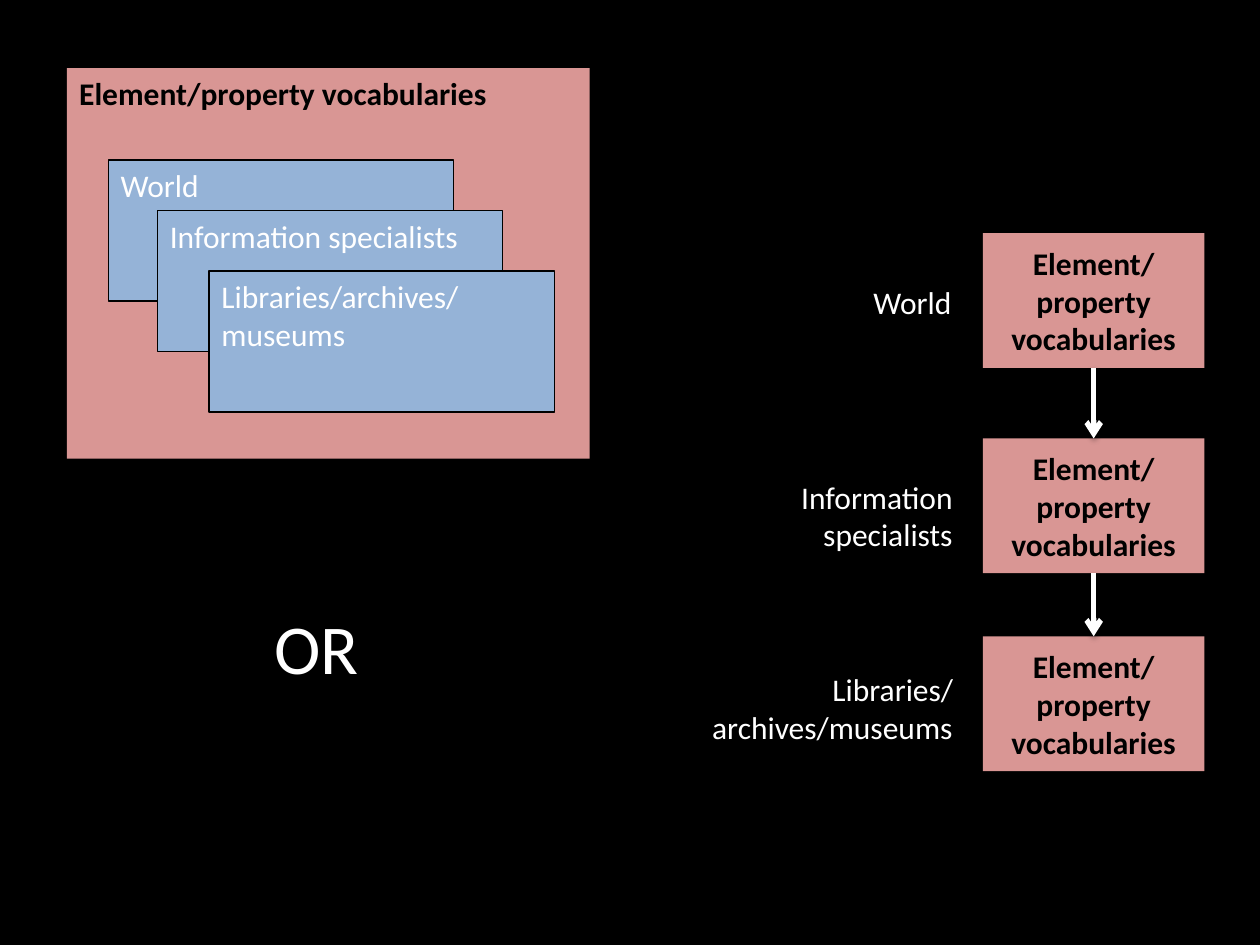
from lxml import etree
from pptx import Presentation
from pptx.dml.color import RGBColor
from pptx.enum.shapes import MSO_CONNECTOR as Connector, MSO_SHAPE as Shape
from pptx.enum.text import MSO_ANCHOR as Anchor, PP_ALIGN as Align
from pptx.oxml import parse_xml
from pptx.oxml.ns import nsdecls, qn
from pptx.util import Inches, Pt

WIDTH, HEIGHT = Inches(10), Inches(7.5)
COLUMNS, ROWS = 100, 75
BLACK, WHITE, ROSE, BLUE = "000000", "FFFFFF", "D99694", "95B3D7"
VOCABULARIES = "Element/property vocabularies"
HEADING = {"size": Pt(18), "name": "Calibri", "bold": True}
LABEL = {"size": Pt(18), "name": "Calibri", "bold": False}
CHOICE = {"size": Pt(40), "name": "Calibri", "bold": False}


def color(value):
    return RGBColor.from_string(value)


def grid(left, top, width, height):
    column, row = WIDTH / COLUMNS, HEIGHT / ROWS
    return [round(n) for n in (left * column, top * row, width * column, height * row)]


def write(holder, text, style, ink, align, anchor):
    frame = holder.text_frame
    frame.word_wrap = True
    frame.vertical_anchor = anchor
    frame.text = text
    paragraph = frame.paragraphs[0]
    paragraph.alignment = align
    for run in paragraph.runs:
        for attribute, value in style.items():
            setattr(run.font, attribute, value)
        run.font.color.rgb = color(ink)


def add_box(slide, place, text, style, ink, fill, outline=None,
            align=Align.LEFT, anchor=Anchor.TOP):
    box = slide.shapes.add_shape(Shape.RECTANGLE, *grid(*place))
    box.shadow.inherit = False
    box.fill.solid()
    box.fill.fore_color.rgb = color(fill)
    if outline:
        box.line.color.rgb = color(outline)
        box.line.width = Pt(0.75)
    else:
        box.line.fill.background()
    write(box, text, style, ink, align, anchor)
    return box


def add_arrow(slide, upper, lower):
    arrow = slide.shapes.add_connector(Connector.STRAIGHT, 0, 0, 0, 0)
    arrow.begin_connect(upper, 2)
    arrow.end_connect(lower, 0)
    arrow.line.color.rgb = color(WHITE)
    arrow.line.width = Pt(3)
    properties = arrow.element.spPr
    etree.SubElement(properties.find(qn("a:ln")), qn("a:tailEnd"), type="arrow")
    properties.append(parse_xml(
        f'<a:effectLst {nsdecls("a")}><a:outerShdw blurRad="{Pt(3.1)}" '
        f'dist="{Pt(1.6)}" dir="5400000" rotWithShape="0"><a:srgbClr val="{BLACK}">'
        '<a:alpha val="38000"/></a:srgbClr></a:outerShdw></a:effectLst>'))


def add_nested_option(slide):
    add_box(slide, (5.3, 5.4, 41.5, 31), VOCABULARIES, HEADING, BLACK, ROSE)
    for left, top, audience in (
        (8.6, 12.7, "World"),
        (12.5, 16.7, "Information specialists"),
        (16.6, 21.5, "Libraries/archives/\vmuseums"),
    ):
        add_box(slide, (left, top, 27.4, 11.2), audience, LABEL, WHITE, BLUE, BLACK)


def add_chain_option(slide):
    vocabularies = [
        add_box(slide, (78, top, 17.6, 10.7), VOCABULARIES, HEADING, BLACK, ROSE,
                align=Align.CENTER, anchor=Anchor.MIDDLE)
        for top in (18.5, 34.8, 50.5)
    ]
    for upper, lower in zip(vocabularies, vocabularies[1:]):
        add_arrow(slide, upper, lower)
    for place, audience in (
        ((64.8, 21.2, 11.7, 5.5), "World"),
        ((54.3, 37.4, 22.3, 7), "Information specialists"),
        ((54.3, 52.7, 22.3, 7), "Libraries/archives/museums"),
    ):
        add_box(slide, place, audience, LABEL, WHITE, BLACK, BLACK,
                align=Align.RIGHT, anchor=Anchor.MIDDLE)


def main():
    deck = Presentation()
    deck.slide_width, deck.slide_height = WIDTH, HEIGHT
    slide = deck.slides.add_slide(deck.slide_layouts[6])
    slide.background.fill.solid()
    slide.background.fill.fore_color.rgb = color(BLACK)
    add_nested_option(slide)
    choice = slide.shapes.add_textbox(*grid(15.5, 47.5, 19.2, 8.4))
    write(choice, "OR", CHOICE, WHITE, Align.CENTER, Anchor.TOP)
    add_chain_option(slide)
    deck.save("out.pptx")


if __name__ == "__main__":
    main()
